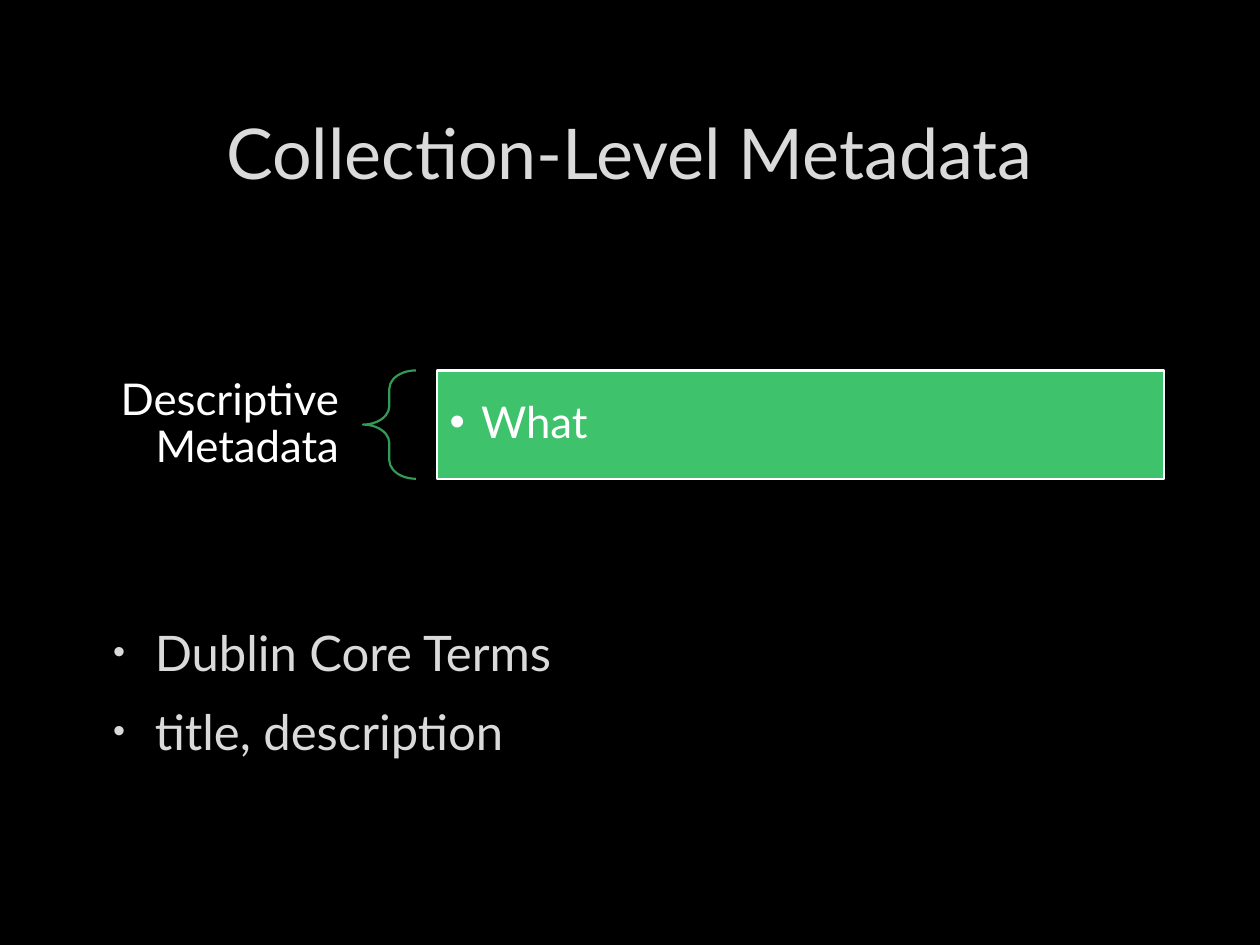
from dataclasses import dataclass

from lxml import etree
from pptx import Presentation
from pptx.dml.color import RGBColor
from pptx.enum import shapes, text
from pptx.oxml import ns
from pptx.util import Inches, Pt

TITLE = "Collection-Level Metadata"
GROUP = "Descriptive Metadata"
QUESTION = "What"
TERMS = ["Dublin Core Terms", "title, description"]


@dataclass(frozen=True)
class Theme:
    font: str = "Lato"
    background: str = "000000"
    soft: str = "DADADA"
    white: str = "FFFFFF"
    green: str = "3EC26C"
    brace: str = "329B56"
    title_size: int = 40
    list_size: int = 28
    label_size: int = 25
    line_width: float = 1.25


THEME = Theme()
LEFT, WIDTH = 0.75, 8.49
ROW_TOP, ROW_HEIGHT = 2.94, 0.86
LABEL_WIDTH, BRACE_WIDTH, BRACE_GAP = 2.13, 0.42, 0.17
BRACE_LEFT = LEFT + LABEL_WIDTH
BAR_LEFT = BRACE_LEFT + BRACE_WIDTH + BRACE_GAP
BAR_WIDTH = LEFT + WIDTH - BAR_LEFT


def color(value):
    return RGBColor.from_string(value)


def inches(*values):
    return [Inches(value) for value in values]


def set_frame(box, anchor, side=0.1, edge=0.05):
    frame = box.text_frame
    frame.word_wrap = True
    frame.vertical_anchor = anchor
    frame.margin_left = frame.margin_right = Inches(side)
    frame.margin_top = frame.margin_bottom = Inches(edge)
    return frame


def write(para, words, size, fill, align):
    para.alignment = align
    span = para.add_run()
    span.text = words
    span.font.name = THEME.font
    span.font.size = Pt(size)
    span.font.color.rgb = color(fill)


def add_bullet(para, margin, indent, percent=100):
    props = para._p.get_or_add_pPr()
    props.set("marL", str(Inches(margin)))
    props.set("indent", str(Inches(-indent)))
    etree.SubElement(props, ns.qn("a:buSzPct")).set("val", str(percent * 1000))
    etree.SubElement(props, ns.qn("a:buFont")).set("typeface", "Arial")
    etree.SubElement(props, ns.qn("a:buChar")).set("char", "•")


def add_outlined(page, kind, place, line):
    shape = page.shapes.add_shape(kind, *inches(*place))
    shape.shadow.inherit = False
    shape.line.color.rgb = color(line)
    shape.line.width = Pt(THEME.line_width)
    return shape


def add_title(page):
    box = page.shapes.add_textbox(*inches(LEFT, 0.67, WIDTH, 1.06))
    frame = set_frame(box, text.MSO_ANCHOR.MIDDLE)
    write(frame.paragraphs[0], TITLE, THEME.title_size, THEME.soft, text.PP_ALIGN.CENTER)


def add_group(page):
    label = page.shapes.add_textbox(*inches(LEFT, ROW_TOP, LABEL_WIDTH, ROW_HEIGHT))
    para = set_frame(label, text.MSO_ANCHOR.MIDDLE, 0.19, 0.07).paragraphs[0]
    para.line_spacing = 0.9
    write(para, GROUP, THEME.label_size, THEME.white, text.PP_ALIGN.RIGHT)

    brace = add_outlined(page, shapes.MSO_SHAPE.LEFT_BRACE,
                         (BRACE_LEFT, ROW_TOP, BRACE_WIDTH, ROW_HEIGHT), THEME.brace)
    brace.fill.background()
    brace.adjustments[0] = 0.35
    brace.adjustments[1] = 0.5

    bar = add_outlined(page, shapes.MSO_SHAPE.RECTANGLE,
                       (BAR_LEFT, ROW_TOP, BAR_WIDTH, ROW_HEIGHT), THEME.white)
    bar.fill.solid()
    bar.fill.fore_color.rgb = color(THEME.green)
    para = set_frame(bar, text.MSO_ANCHOR.MIDDLE, 0.1, 0.1).paragraphs[0]
    add_bullet(para, 0.25, 0.25)
    para.line_spacing = 0.9
    write(para, QUESTION, THEME.label_size, THEME.white, text.PP_ALIGN.LEFT)


def add_terms(page):
    box = page.shapes.add_textbox(*inches(LEFT, 4.89, WIDTH, 2.25))
    frame = set_frame(box, text.MSO_ANCHOR.TOP)
    for index, term in enumerate(TERMS):
        para = frame.add_paragraph() if index else frame.paragraphs[0]
        add_bullet(para, 0.38, 0.33, 70)
        if index:
            para.space_before = Pt(0.2 * THEME.list_size)
        para.space_after = Pt(6)
        write(para, term, THEME.list_size, THEME.soft, text.PP_ALIGN.LEFT)


def main():
    deck = Presentation()
    deck.slide_width, deck.slide_height = inches(10, 7.5)
    page = deck.slides.add_slide(deck.slide_layouts[6])
    page.background.fill.solid()
    page.background.fill.fore_color.rgb = color(THEME.background)
    add_title(page)
    add_group(page)
    add_terms(page)
    deck.save("out.pptx")


if __name__ == "__main__":
    main()
